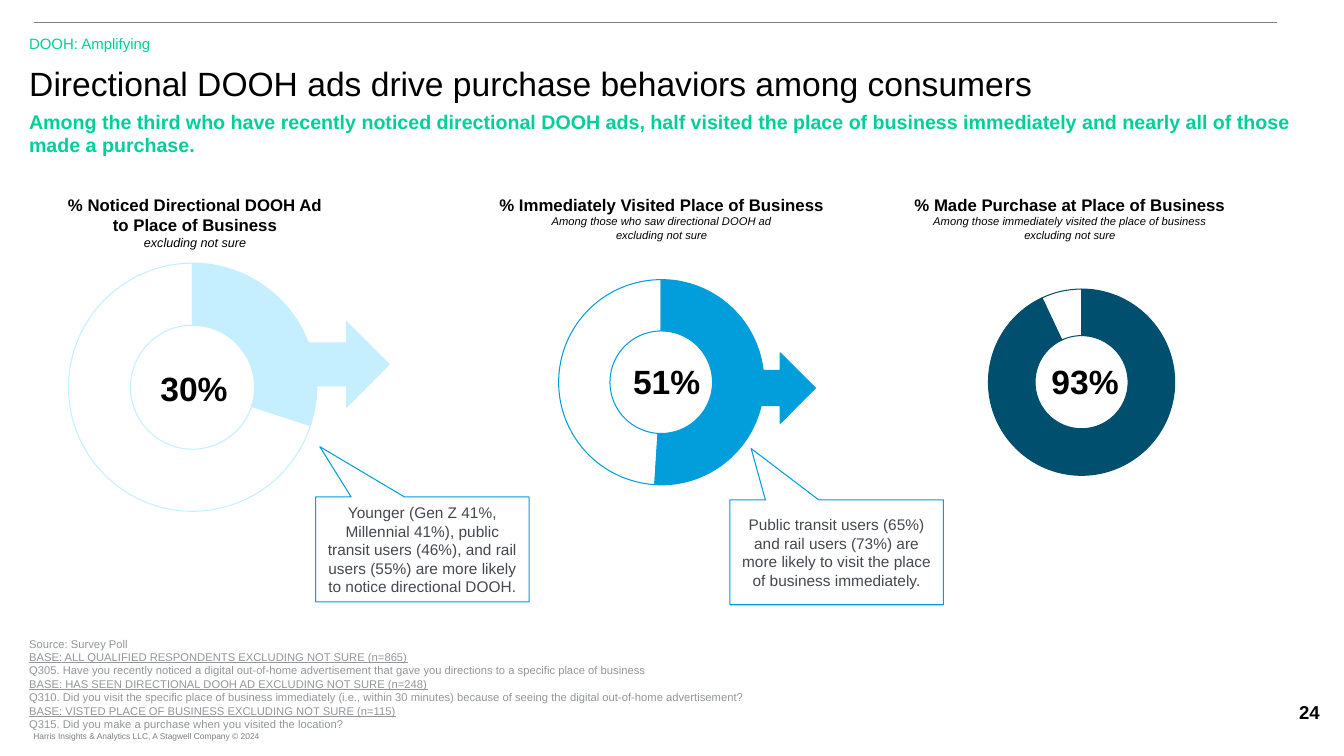
import pptx
import pptx.chart.data
import pptx.dml.color
import pptx.enum.chart
import pptx.enum.shapes
import pptx.enum.text
import pptx.oxml
import pptx.util
from lxml import etree

Pt = pptx.util.Pt
SHAPE = pptx.enum.shapes.MSO_SHAPE
LEFT = pptx.enum.text.PP_ALIGN.LEFT
MID = pptx.enum.text.PP_ALIGN.CENTER

# Content: boxes are left, top, width, height in points
COLORS = {
    "black": "000000", "green": "00CF9C", "gray": "939598", "rule": "808080",
    "foot": "7F7F7F", "ink": "44474E",
    "pale": "C5EFFF", "blue": "019EDB", "navy": "004F6E",
}
EDGE = 13.7
TITLE = "Directional DOOH ads drive purchase behaviors among consumers"
LABEL = "DOOH: Amplifying"
LEAD = ("Among the third who have recently noticed directional DOOH ads, half visited "
        "the place of business immediately and nearly all of those made a purchase.")
SOURCES = [
    "Source: Survey Poll",
    "BASE: ALL QUALIFIED RESPONDENTS EXCLUDING NOT SURE (n=865)",
    "Q305. Have you recently noticed a digital out-of-home advertisement that gave you "
    "directions to a specific place of business",
    "BASE: HAS SEEN DIRECTIONAL DOOH AD EXCLUDING NOT SURE (n=248)",
    "Q310. Did you visit the specific place of business immediately (i.e., within 30 "
    "minutes) because of seeing the digital out-of-home advertisement?",
    "BASE: VISTED PLACE OF BUSINESS EXCLUDING NOT SURE (n=115)",
    "Q315. Did you make a purchase when you visited the location?",
]
FOOTER = "Harris Insights & Analytics LLC, A Stagwell Company © 2024"
PAGE = "24"
RINGS = [
    {"value": 30, "color": "pale", "chart": (36, 172.8, 198, 208.1),
     "arrow": (203.8, 229.7, 74.2, 61.2), "figure": (101.5, 259.2, 74.2, 36),
     "left": -47.5, "small": 9,
     "head": ["% Noticed Directional DOOH Ad", "to Place of Business"],
     "note": ["excluding not sure"]},
    {"value": 51, "color": "blue", "chart": (388.1, 187.2, 164.2, 172.1),
     "arrow": (521.3, 252, 61.2, 50.4), "figure": (437, 254.2, 78.5, 36),
     "left": 285.8, "small": 8,
     "head": ["% Immediately Visited Place of Business"],
     "note": ["Among those who saw directional DOOH ad", "excluding not sure"]},
    {"value": 93, "color": "navy", "chart": (696.2, 195.1, 149, 156.2),
     "arrow": None, "figure": (736.6, 254.2, 77, 36),
     "left": 577.4, "small": 8,
     "head": ["% Made Purchase at Place of Business"],
     "note": ["Among those immediately visited the place of business",
              "excluding not sure"]},
]
CALLOUTS = [
    ((225.4, 355, 152.6, 74.9), (-0.48, -0.98),
     "Younger (Gen Z 41%, Millennial 41%), public transit users (46%), and rail users "
     "(55%) are more likely to notice directional DOOH."),
    ((521.3, 357.1, 152.6, 74.9), (-0.4, -0.99),
     "Public transit users (65%) and rail users (73%) are more likely to visit the "
     "place of business immediately."),
]
PLOT = {"x": 0.036, "y": 0.073, "w": 0.954, "h": 0.852}


def rgb(name):
    return pptx.dml.color.RGBColor.from_string(COLORS[name])


def pts(box):
    return [Pt(n) for n in box]


def style(font, size, color, bold=False):
    font.name, font.size, font.bold = "Arial", Pt(size), bold
    font.color.rgb = rgb(color)


def write(frame, lines, size, color, bold=False, align=LEFT):
    frame.word_wrap = True
    frame.auto_size = pptx.enum.text.MSO_AUTO_SIZE.NONE
    frame.vertical_anchor = pptx.enum.text.MSO_ANCHOR.TOP
    for i, line in enumerate(lines):
        para = frame.add_paragraph() if i else frame.paragraphs[0]
        para.text, para.alignment = line, align
        style(para.font, size, color, bold)
    return frame


def add_text(box, *args, **kwargs):
    frame = slide.shapes.add_textbox(*pts(box)).text_frame
    return write(frame, *args, **kwargs)


def add_shape(kind, box, line, fill=None):
    shape = slide.shapes.add_shape(kind, *pts(box))
    shape.shadow.inherit = False
    if fill:
        shape.fill.solid()
        shape.fill.fore_color.rgb = rgb(fill)
    else:
        shape.fill.background()
    shape.line.color.rgb, shape.line.width = rgb(line), Pt(0.75)
    return shape


def add_ring(box, value, color):
    data = pptx.chart.data.CategoryChartData()
    data.categories = ["1", "2"]
    data.add_series("Series 1", [value, 100 - value])
    kind = pptx.enum.chart.XL_CHART_TYPE.DOUGHNUT
    chart = slide.shapes.add_chart(kind, *pts(box), data).chart
    chart.has_legend = chart.has_title = False
    style(chart.font, 14, "black")
    points = chart.plots[0].series[0].points
    for i in range(2):
        form = points[i].format
        form.line.color.rgb, form.line.width = rgb(color), Pt(0.75)
        form.fill.background()
    points[0].format.fill.solid()
    points[0].format.fill.fore_color.rgb = rgb(color)

    # Fixed plot area
    area = chart.plots[0]._element.getparent()
    ns = pptx.oxml.ns.qn
    for old in area.findall(ns("c:layout")):
        area.remove(old)
    layout = etree.Element(ns("c:layout"))
    manual = etree.SubElement(layout, ns("c:manualLayout"))
    rules = {"layoutTarget": "inner", "xMode": "edge", "yMode": "edge", **PLOT}
    for tag, val in rules.items():
        etree.SubElement(manual, ns("c:" + tag)).set("val", str(val))
    area.insert(0, layout)


deck = pptx.Presentation()
deck.slide_width, deck.slide_height = Pt(960), Pt(540)
slide = deck.slides.add_slide(deck.slide_layouts[5])

# Page frame
rule = slide.shapes.add_connector(
    pptx.enum.shapes.MSO_CONNECTOR.STRAIGHT, *pts((24.5, 15.8, 912.2, 15.8)))
rule.line.color.rgb, rule.line.width = rgb("rule"), Pt(0.5)
etree.SubElement(rule._element.spPr, pptx.oxml.ns.qn("a:effectLst"))
add_text((898.6, 496.8, 73.4, 23.8), [PAGE], 13.3, "black", True, MID)
foot = add_text((23.8, 518.4, 172, 14.4), [FOOTER], 6, "foot")
foot.margin_left, foot.word_wrap = 0, False

# Title block
title = slide.shapes.title
title.left, title.top, title.width, title.height = pts((EDGE, 41, 897.8, 33.8))
write(title.text_frame, [TITLE], 24, "black")
add_text((EDGE, 20.9, 480, 20.2), [LABEL], 10.7, "green")
add_text((EDGE, 74.9, 928, 29.5), [LEAD], 14, "green", True)

# Sources
notes = add_text((EDGE, 451.4, 728.6, 74.9), SOURCES, 8, "gray")
for para in notes.paragraphs:
    para.font.underline = para.text.startswith("BASE")

# Rings with arrows, figures and headings
for ring in RINGS:
    color = ring["color"]
    if ring["arrow"]:
        add_shape(SHAPE.RIGHT_ARROW, ring["arrow"], color, color)
    add_ring(ring["chart"], ring["value"], color)
    add_text(ring["figure"], [f"{ring['value']}%"], 24, "black", True, MID)
    head = add_text((ring["left"], 135.4, 373.7, 47.5),
                    ring["head"] + ring["note"], 12, "black", True, MID)
    for para in head.paragraphs[len(ring["head"]):]:
        style(para.font, ring["small"], "black")
        para.font.italic = True

# Callouts
for box, tip, text in CALLOUTS:
    note = add_shape(SHAPE.RECTANGULAR_CALLOUT, box, "blue")
    note.adjustments[0], note.adjustments[1] = tip
    write(note.text_frame, [text], 11, "ink", align=MID)
    note.text_frame.vertical_anchor = pptx.enum.text.MSO_ANCHOR.MIDDLE

deck.save("out.pptx")
